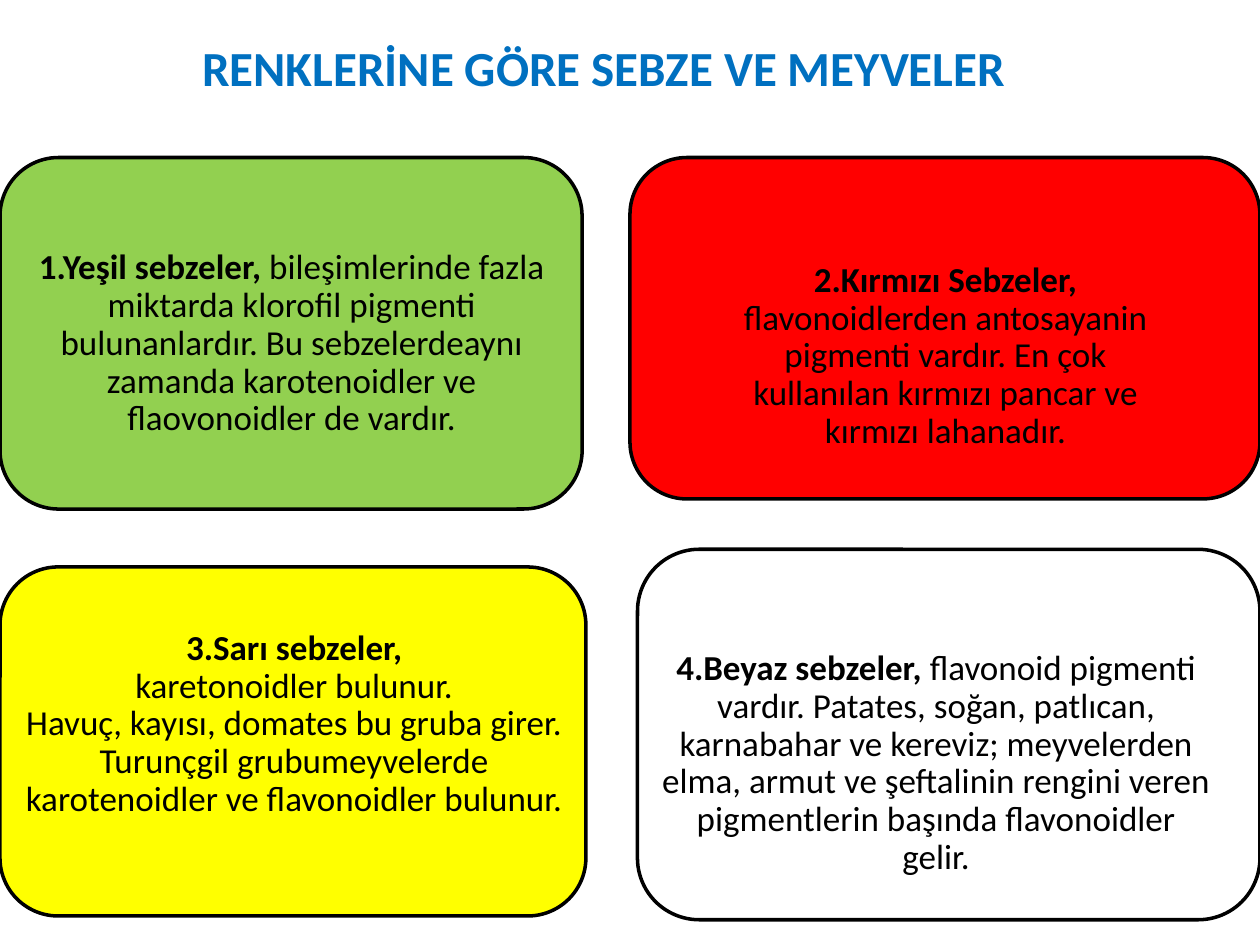
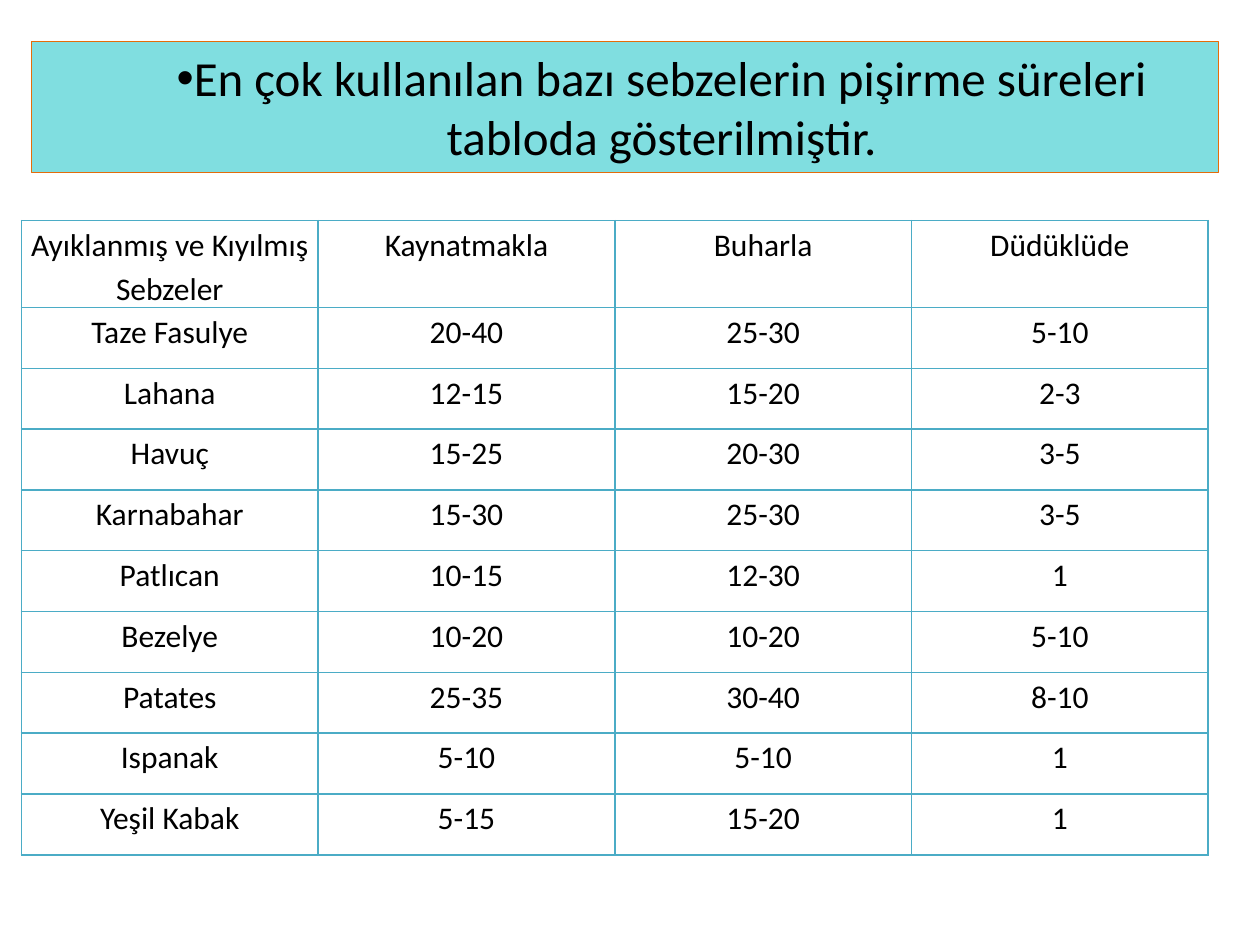
import dataclasses

import pptx
import pptx.dml.color
import pptx.enum.shapes
import pptx.enum.text
import pptx.oxml
import pptx.oxml.ns
import pptx.presentation
import pptx.shapes.autoshape
import pptx.slide
import pptx.table
import pptx.text.text
import pptx.util

Inches = pptx.util.Inches
Pt = pptx.util.Pt
RGBColor = pptx.dml.color.RGBColor
ShapeKind = pptx.enum.shapes.MSO_SHAPE

# Shared style
FONT = "Calibri"
BLACK = RGBColor(0x00, 0x00, 0x00)
WHITE = RGBColor(0xFF, 0xFF, 0xFF)
GREEN = RGBColor(0x92, 0xD0, 0x50)
RED = RGBColor(0xFF, 0x00, 0x00)
YELLOW = RGBColor(0xFF, 0xFF, 0x00)
TITLE_BLUE = RGBColor(0x00, 0x70, 0xC0)
BANNER_TEAL = RGBColor(0x80, 0xDE, 0xE0)
BANNER_LINE = RGBColor(0xE4, 0x6C, 0x0A)
TABLE_LINE = RGBColor(0x4B, 0xAC, 0xC6)
HEADING_SIZE = 28
CARD_SIZE = 20
TABLE_SIZE = 18


@dataclasses.dataclass(frozen=True)
class Box:
    left: float
    top: float
    width: float
    height: float

    def lengths(self) -> tuple:
        return tuple(Inches(value) for value in dataclasses.astuple(self))


@dataclasses.dataclass(frozen=True)
class Card:
    frame: Box
    text_area: Box
    fill: RGBColor
    heading: str
    body: str


CARDS = [
    Card(Box(0, 1.25, 4.62, 2.79), Box(0, 1.82, 4.63, 0.71), GREEN,
         "1.Yeşil sebzeler, ",
         "bileşimlerinde fazla miktarda klorofil pigmenti bulunanlardır. "
         "Bu sebzelerdeaynı zamanda karotenoidler ve flaovonoidler de vardır."),
    Card(Box(5, 1.25, 5, 2.71), Box(5.59, 1.92, 3.83, 0.71), RED,
         "2.Kırmızı Sebzeler, ",
         "flavonoidlerden antosayanin pigmenti vardır. En çok kullanılan "
         "kırmızı pancar ve kırmızı lahanadır."),
    Card(Box(0, 4.5, 4.65, 2.77), Box(0, 4.84, 4.67, 0.57), YELLOW,
         "3.Sarı sebzeler,\n",
         "karetonoidler bulunur.\nHavuç, kayısı, domates bu gruba girer. "
         "Turunçgil grubumeyvelerde\nkarotenoidler ve flavonoidler bulunur."),
    Card(Box(5.06, 4.36, 4.94, 2.94), Box(5.08, 5, 4.7, 1.58), WHITE,
         "4.Beyaz sebzeler, ",
         "flavonoid pigmenti vardır. Patates, soğan, patlıcan, karnabahar ve "
         "kereviz; meyvelerden elma, armut ve şeftalinin rengini veren "
         "pigmentlerin başında flavonoidler gelir."),
]

COOKING_TIMES = [
    ("Ayıklanmış ve Kıyılmış Sebzeler", "Kaynatmakla", "Buharla", "Düdüklüde"),
    ("Taze Fasulye", "20-40", "25-30", "5-10"),
    ("Lahana", "12-15", "15-20", "2-3"),
    ("Havuç", "15-25", "20-30", "3-5"),
    ("Karnabahar", "15-30", "25-30", "3-5"),
    ("Patlıcan", "10-15", "12-30", "1"),
    ("Bezelye", "10-20", "10-20", "5-10"),
    ("Patates", "25-35", "30-40", "8-10"),
    ("Ispanak", "5-10", "5-10", "1"),
    ("Yeşil Kabak", "5-15", "15-20", "1"),
]


def style_paragraph(paragraph: pptx.text.text._Paragraph, size: float,
                    color: RGBColor = BLACK) -> None:
    paragraph.alignment = pptx.enum.text.PP_ALIGN.CENTER
    paragraph.font.name = FONT
    paragraph.font.size = Pt(size)
    paragraph.font.color.rgb = color


def add_runs(paragraph: pptx.text.text._Paragraph, text: str, bold: bool) -> None:
    """Add text to a paragraph, turning each newline into a line break."""
    for index, line in enumerate(text.split("\n")):
        if index:
            paragraph.add_line_break()
        if line:
            run = paragraph.add_run()
            run.text = line
            run.font.bold = bold


def add_panel(slide: pptx.slide.Slide, kind: ShapeKind, box: Box, fill: RGBColor,
              line: RGBColor, line_width: float) -> pptx.shapes.autoshape.Shape:
    shape = slide.shapes.add_shape(kind, *box.lengths())
    shape.shadow.inherit = False
    shape.fill.solid()
    shape.fill.fore_color.rgb = fill
    shape.line.color.rgb = line
    shape.line.width = Pt(line_width)
    return shape


def add_text_box(slide: pptx.slide.Slide, box: Box) -> pptx.text.text.TextFrame:
    frame = slide.shapes.add_textbox(*box.lengths()).text_frame
    frame.word_wrap = True
    return frame


def add_card(slide: pptx.slide.Slide, card: Card) -> None:
    add_panel(slide, ShapeKind.ROUNDED_RECTANGLE, card.frame, card.fill, BLACK, 2)
    frame = add_text_box(slide, card.text_area)
    frame.margin_left = frame.margin_right = frame.margin_top = Inches(0.16)
    frame.margin_bottom = 0
    paragraph = frame.paragraphs[0]
    style_paragraph(paragraph, CARD_SIZE)
    paragraph.line_spacing = 0.9
    add_runs(paragraph, card.heading, bold=True)
    add_runs(paragraph, card.body, bold=False)


def add_bullet(paragraph: pptx.text.text._Paragraph, indent: float) -> None:
    properties = paragraph._p.get_or_add_pPr()
    properties.set("marL", str(Inches(indent)))
    properties.set("indent", "0")
    namespace = pptx.oxml.ns.nsdecls("a")
    bullet_xml = (f'<a:buFont {namespace} typeface="Arial"/>',
                  f'<a:buChar {namespace} char="•"/>')
    for index, xml in enumerate(bullet_xml):
        properties.insert(index, pptx.oxml.parse_xml(xml))


def add_borders(cell: pptx.table._Cell, color: RGBColor, width: float) -> None:
    properties = cell._tc.get_or_add_tcPr()
    for side in ("lnL", "lnR", "lnT", "lnB"):
        properties.append(pptx.oxml.parse_xml(
            f'<a:{side} {pptx.oxml.ns.nsdecls("a")} w="{Pt(width)}">'
            f'<a:solidFill><a:srgbClr val="{color}"/></a:solidFill></a:{side}>'))


def fill_cell(cell: pptx.table._Cell, text: str) -> None:
    add_borders(cell, TABLE_LINE, 1)
    cell.fill.background()
    cell.margin_left = cell.margin_right = Inches(0.07)
    cell.margin_top = cell.margin_bottom = 0
    paragraph = cell.text_frame.paragraphs[0]
    paragraph.text = text
    style_paragraph(paragraph, TABLE_SIZE)
    paragraph.line_spacing = 1.15


def build_colour_slide(slide: pptx.slide.Slide) -> None:
    for card in CARDS:
        add_card(slide, card)
    title = add_text_box(slide, Box(0.5, 0.25, 8.58, 0.57)).paragraphs[0]
    title.text = "RENKLERİNE GÖRE SEBZE VE MEYVELER"
    style_paragraph(title, HEADING_SIZE, TITLE_BLUE)
    title.font.bold = True


def build_cooking_slide(slide: pptx.slide.Slide) -> None:
    # Banner
    banner = add_panel(slide, ShapeKind.RECTANGLE, Box(0.25, 0.33, 9.42, 1.04),
                       BANNER_TEAL, BANNER_LINE, 0.75)
    banner.text_frame.word_wrap = True
    banner.text_frame.vertical_anchor = pptx.enum.text.MSO_ANCHOR.TOP
    paragraph = banner.text_frame.paragraphs[0]
    paragraph.text = ("En çok kullanılan bazı sebzelerin pişirme süreleri "
                      "tabloda gösterilmiştir.")
    style_paragraph(paragraph, HEADING_SIZE)
    add_bullet(paragraph, 0.58)

    # Cooking times; the two-line header row grows when drawn
    table = slide.shapes.add_table(
        len(COOKING_TIMES), len(COOKING_TIMES[0]),
        *Box(0.17, 1.75, 9.42, 4.83).lengths()).table
    table.first_row = False
    table.horz_banding = False
    for row, texts in zip(table.rows, COOKING_TIMES):
        for cell, text in zip(row.cells, texts):
            fill_cell(cell, text)


def main() -> None:
    presentation = pptx.Presentation()
    presentation.slide_width = Inches(10)
    presentation.slide_height = Inches(7.5)
    blank_layout = presentation.slide_layouts[6]
    for build in (build_colour_slide, build_cooking_slide):
        build(presentation.slides.add_slide(blank_layout))
    presentation.save("out.pptx")


if __name__ == "__main__":
    main()
